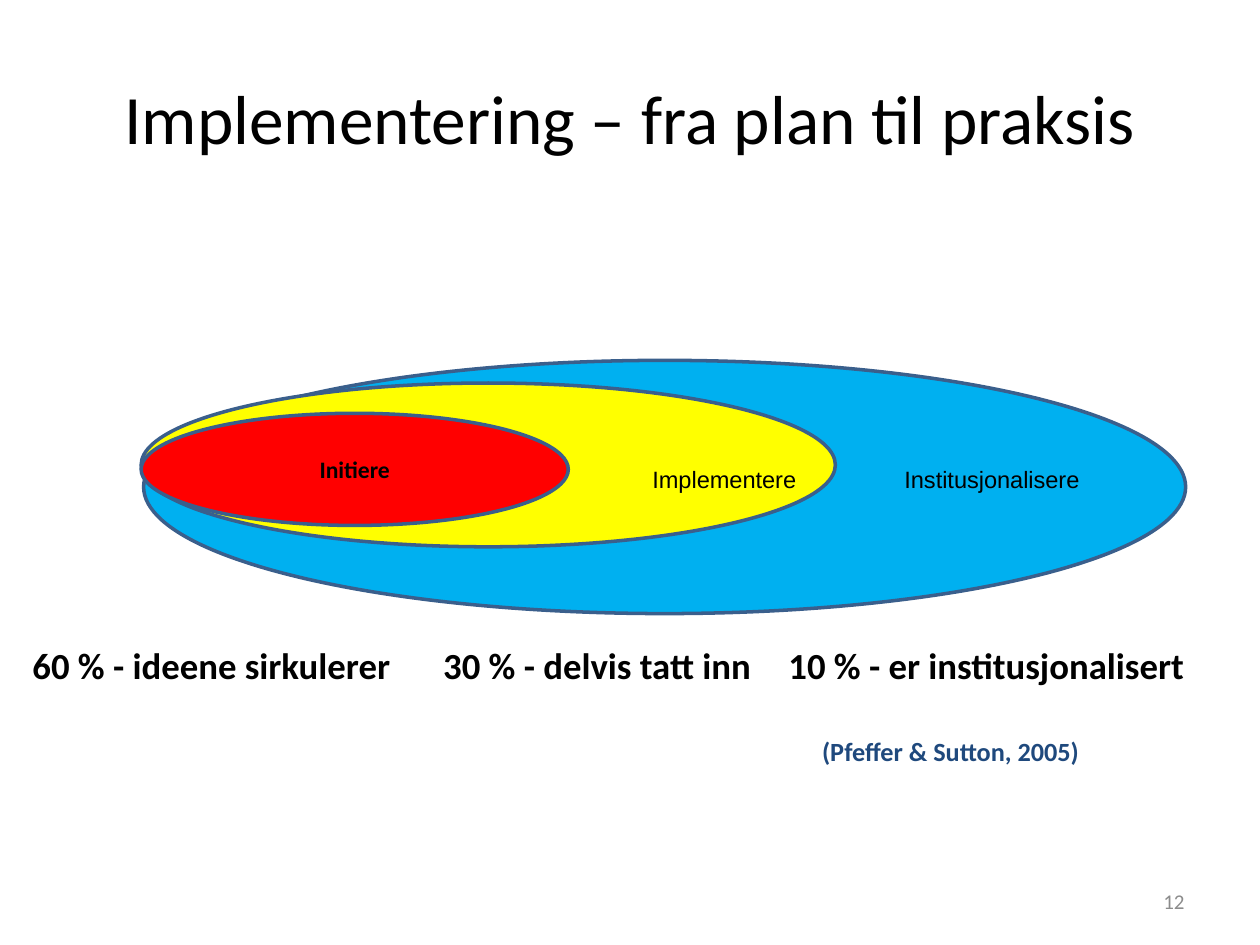
from dataclasses import dataclass

from lxml import etree
from pptx import Presentation
from pptx.dml.color import RGBColor
from pptx.enum.shapes import MSO_SHAPE
from pptx.enum.text import MSO_ANCHOR, PP_ALIGN
from pptx.oxml.ns import qn
from pptx.slide import Slide
from pptx.util import Inches, Pt

OVAL = MSO_SHAPE.OVAL
TOP, MIDDLE = MSO_ANCHOR.TOP, MSO_ANCHOR.MIDDLE
LEFT, CENTER, RIGHT = PP_ALIGN.LEFT, PP_ALIGN.CENTER, PP_ALIGN.RIGHT

BLACK = RGBColor(0x00, 0x00, 0x00)
NAVY = RGBColor(0x1F, 0x49, 0x7D)
GRAY = RGBColor(0x8C, 0x8C, 0x8C)
OUTLINE = RGBColor(0x3A, 0x5F, 0x8C)
BLUE = RGBColor(0x00, 0xB0, 0xF0)
YELLOW = RGBColor(0xFF, 0xFF, 0x00)
RED = RGBColor(0xFF, 0x00, 0x00)


@dataclass(frozen=True)
class Area:
    left: float
    top: float
    width: float
    height: float

    def lengths(self) -> list[Inches]:
        return [Inches(v) for v in (self.left, self.top, self.width, self.height)]


@dataclass(frozen=True)
class Label:
    text: str
    size: float
    color: RGBColor = BLACK
    bold: bool = False
    font: str = "Calibri"
    align: PP_ALIGN = CENTER
    anchor: MSO_ANCHOR = MIDDLE
    wrap: bool = True
    tabs: tuple[float, ...] = ()


@dataclass(frozen=True)
class Stage:
    area: Area
    color: RGBColor
    label: Label | None = None


STAGES = (
    Stage(Area(1.14, 2.86, 8.27, 2.01), BLUE),
    Stage(Area(1.12, 3.04, 5.51, 1.3), YELLOW),
    Stage(Area(1.12, 3.28, 3.39, 0.89), RED, Label("Initiere", 13.5, bold=True)),
)

TEXTS = (
    (Area(0.5, 0.3, 9, 1.25), Label("Implementering – fra plan til praksis", 39.6)),
    (Area(5.38, 5.77, 4.33, 0.38),
     Label("(Pfeffer & Sutton, 2005)", 15, NAVY, bold=True)),
    (Area(7.17, 6.95, 2.33, 0.4), Label("12", 12, GRAY, align=RIGHT)),
    (Area(5.08, 3.64, 4.57, 0.33),
     Label("Implementere\tInstitusjonalisere", 13.5, font="Arial",
           align=LEFT, anchor=TOP, tabs=(2,))),
    (Area(0.16, 5.05, 9.5, 0.45),
     Label("60 % - ideene sirkulerer\t30 % - delvis tatt inn\t10 % - er institusjonalisert",
           21, bold=True, align=LEFT, anchor=TOP, wrap=False, tabs=(3.26, 6))),
)


def write_label(frame, label: Label) -> None:
    frame.word_wrap = label.wrap
    frame.vertical_anchor = label.anchor
    para = frame.paragraphs[0]
    para.text = label.text
    para.alignment = label.align
    para.font.name = label.font
    para.font.size = Pt(label.size)
    para.font.bold = label.bold
    para.font.color.rgb = label.color
    if label.tabs:
        properties = para._p.get_or_add_pPr()
        tab_list = etree.Element(qn("a:tabLst"))
        for stop in label.tabs:
            etree.SubElement(tab_list, qn("a:tab"), pos=str(Inches(stop)), algn="l")
        properties.find(qn("a:defRPr")).addprevious(tab_list)


def add_stage(page: Slide, stage: Stage) -> None:
    ellipse = page.shapes.add_shape(OVAL, *stage.area.lengths())
    ellipse.shadow.inherit = False
    ellipse.fill.solid()
    ellipse.fill.fore_color.rgb = stage.color
    ellipse.line.color.rgb = OUTLINE
    ellipse.line.width = Pt(2)
    if stage.label:
        write_label(ellipse.text_frame, stage.label)


def add_text(page: Slide, area: Area, label: Label) -> None:
    box = page.shapes.add_textbox(*area.lengths())
    write_label(box.text_frame, label)


def main() -> None:
    deck = Presentation()
    deck.slide_width = Inches(10)
    deck.slide_height = Inches(7.5)
    page = deck.slides.add_slide(deck.slide_layouts[6])
    for stage in STAGES:
        add_stage(page, stage)
    for area, label in TEXTS:
        add_text(page, area, label)
    deck.save("out.pptx")


if __name__ == "__main__":
    main()
